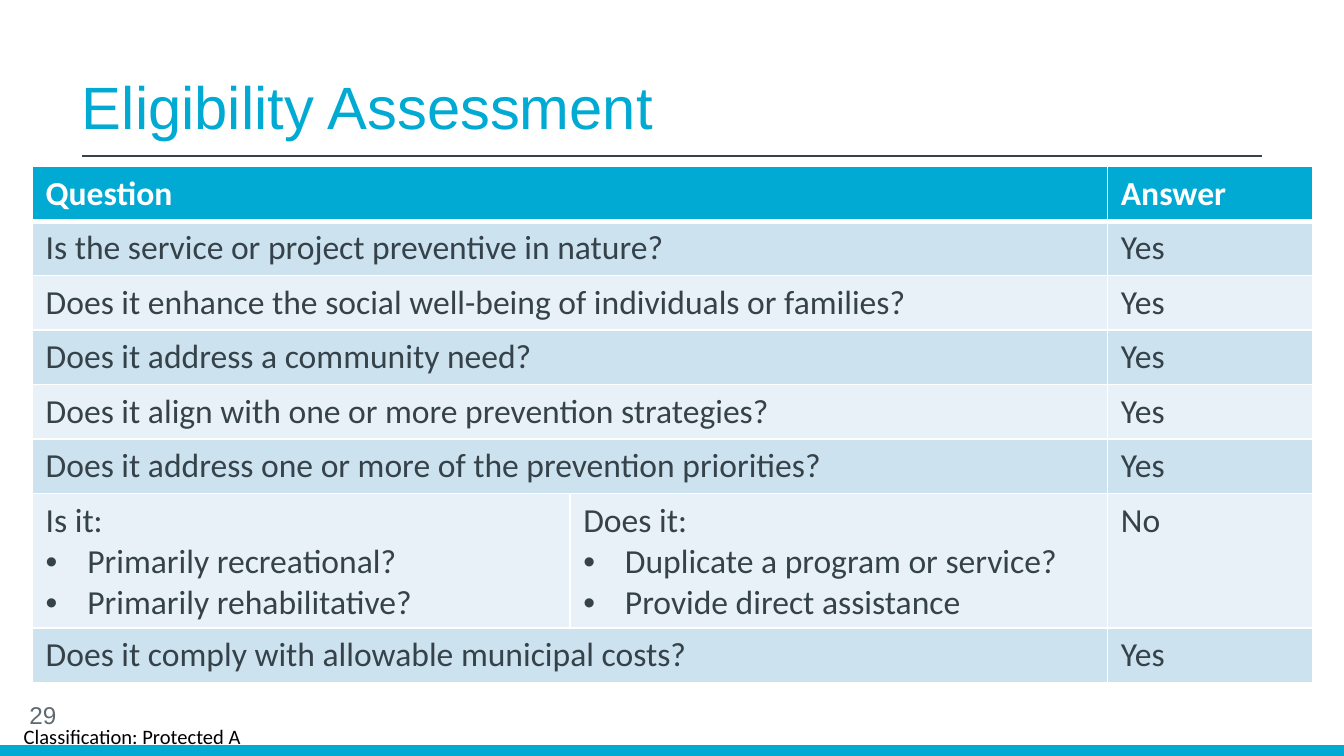
from dataclasses import dataclass

from pptx import Presentation
from pptx.dml.color import RGBColor
from pptx.enum.shapes import MSO_CONNECTOR, MSO_SHAPE
from pptx.enum.text import MSO_ANCHOR, PP_ALIGN
from pptx.oxml.ns import qn
from pptx.util import Inches, Pt
from lxml.etree import SubElement


@dataclass(frozen=True)
class Theme:
    blue: str = "00AAD2"
    dark: str = "36424A"
    gray: str = "5F6A72"
    black: str = "000000"
    white: str = "FFFFFF"
    bands: tuple[str, str] = ("CCE2EE", "E7F1F7")
    head: str = "Arial"
    body: str = "Calibri"
    title: float = 32
    cell: float = 18
    page: float = 13
    label: float = 11


@dataclass(frozen=True)
class Check:
    """A table row: one question text per column, each with optional bullets."""
    asks: tuple[tuple[str, ...], ...]
    answer: str = "Yes"


THEME = Theme()
WIDTH = 10
HEIGHT = WIDTH * 9 / 16
COLS = (4, 4, 1.53)
TABLE, TALL = 3.84, 1
INDENT = 0.31
CHECKS = (
    Check((("Question",),), "Answer"),
    Check((("Is the service or project preventive in nature?",),)),
    Check((("Does it enhance the social well-being of individuals or families?",),)),
    Check((("Does it address a community need?",),)),
    Check((("Does it align with one or more prevention strategies?",),)),
    Check((("Does it address one or more of the prevention priorities?",),)),
    Check((("Is it:", "Primarily recreational?", "Primarily rehabilitative?"),
           ("Does it:", "Duplicate a program or service?", "Provide direct assistance")),
          "No"),
    Check((("Does it comply with allowable municipal costs?",),)),
)
SHORT = (TABLE - TALL) / (len(CHECKS) - 1)


def color(code: str) -> RGBColor:
    return RGBColor.from_string(code)


def style(para, face: str, size: float, code: str, bold: bool = False) -> None:
    para.font.name = face
    para.font.size = Pt(size)
    para.font.bold = bold
    para.font.color.rgb = color(code)


def bullet(para) -> None:
    props = para._p.get_or_add_pPr()
    props.set("marL", str(Inches(INDENT)))
    props.set("indent", str(-Inches(INDENT)))
    SubElement(props, qn("a:buFont"), typeface="Arial")
    SubElement(props, qn("a:buChar"), char="•")


def border(cell, base: float) -> None:
    """Draw white edges, with the bottom one of the given weight."""
    props = cell._tc.get_or_add_tcPr()
    for side, weight in zip("LRTB", (1, 1, 1, base)):
        line = SubElement(props, qn(f"a:ln{side}"), w=str(Pt(weight)))
        fill = SubElement(line, qn("a:solidFill"))
        SubElement(fill, qn("a:srgbClr"), val=THEME.white)


def write(cell, lines: tuple[str, ...], code: str, bold: bool) -> None:
    frame = cell.text_frame
    for i, text in enumerate(lines):
        para = frame.add_paragraph() if i else frame.paragraphs[0]
        para.text = text
        if i:
            bullet(para)
        style(para, THEME.body, THEME.cell, code, bold)


def add_checks(slide) -> None:
    frame = slide.shapes.add_table(
        len(CHECKS), len(COLS), Inches(0.24), Inches(1.24),
        Inches(sum(COLS)), Inches(TABLE))
    table = frame.table
    table.horz_banding = False
    for col, width in zip(table.columns, COLS):
        col.width = Inches(width)
    for i, check in enumerate(CHECKS):
        first = i == 0
        whole = len(check.asks) == 1
        back = THEME.blue if first else THEME.bands[(i - 1) % 2]
        ink = THEME.white if first else THEME.dark
        table.rows[i].height = Inches(SHORT if whole else TALL)
        if whole:
            table.cell(i, 0).merge(table.cell(i, 1))
        for j in range(len(COLS)):
            cell = table.cell(i, j)
            border(cell, 3 if first else 1)
            cell.fill.solid()
            cell.fill.fore_color.rgb = color(back)
        for j, lines in enumerate(check.asks):
            write(table.cell(i, j), lines, ink, first)
        write(table.cell(i, len(COLS) - 1), (check.answer,), ink, first)


def add_note(slide, text: str, box: tuple[float, ...], face: str,
             size: float, code: str):
    """Add a vertically centred line of text and return its frame."""
    frame = slide.shapes.add_textbox(*map(Inches, box)).text_frame
    frame.word_wrap = True
    frame.vertical_anchor = MSO_ANCHOR.MIDDLE
    para = frame.paragraphs[0]
    para.text = text
    style(para, face, size, code)
    return frame


def add_bar(slide) -> None:
    deep = 0.08
    bar = slide.shapes.add_shape(MSO_SHAPE.RECTANGLE, 0, Inches(HEIGHT - deep),
                                 Inches(WIDTH), Inches(deep))
    bar.shadow.inherit = False
    bar.fill.solid()
    bar.fill.fore_color.rgb = color(THEME.blue)
    bar.line.fill.background()


def add_rule(slide) -> None:
    edge, top = Inches(0.61), Inches(1.16)
    rule = slide.shapes.add_connector(MSO_CONNECTOR.STRAIGHT, edge, top,
                                      Inches(WIDTH) - edge, top)
    rule.line.color.rgb = color(THEME.dark)
    rule.line.width = Pt(0.75)
    SubElement(rule._element.spPr, qn("a:effectLst"))


def set_title(slide, text: str) -> None:
    title = slide.shapes.title
    title.left, title.top, title.width, title.height = map(
        Inches, (0.51, 0.48, 8.99, 0.62))
    title.text_frame.vertical_anchor = MSO_ANCHOR.BOTTOM
    para = title.text_frame.paragraphs[0]
    para.text = text
    para.alignment = PP_ALIGN.LEFT
    style(para, THEME.head, THEME.title, THEME.blue)


def main() -> None:
    deck = Presentation()
    deck.slide_width, deck.slide_height = Inches(WIDTH), Inches(HEIGHT)
    slide = deck.slides.add_slide(deck.slide_layouts[5])
    set_title(slide, "Eligibility Assessment")
    add_bar(slide)
    label = add_note(slide, "Classification: Protected A", (0, 5.32, 1.97, 0.31),
                     THEME.body, THEME.label, THEME.black)
    label.margin_left = label.margin_right = 0
    label.margin_top = label.margin_bottom = 0
    label.paragraphs[0].alignment = PP_ALIGN.CENTER
    add_rule(slide)
    add_checks(slide)
    add_note(slide, "29", (0.12, 5.17, 2.25, 0.3),
             THEME.head, THEME.page, THEME.gray)
    deck.save("out.pptx")


if __name__ == "__main__":
    main()
